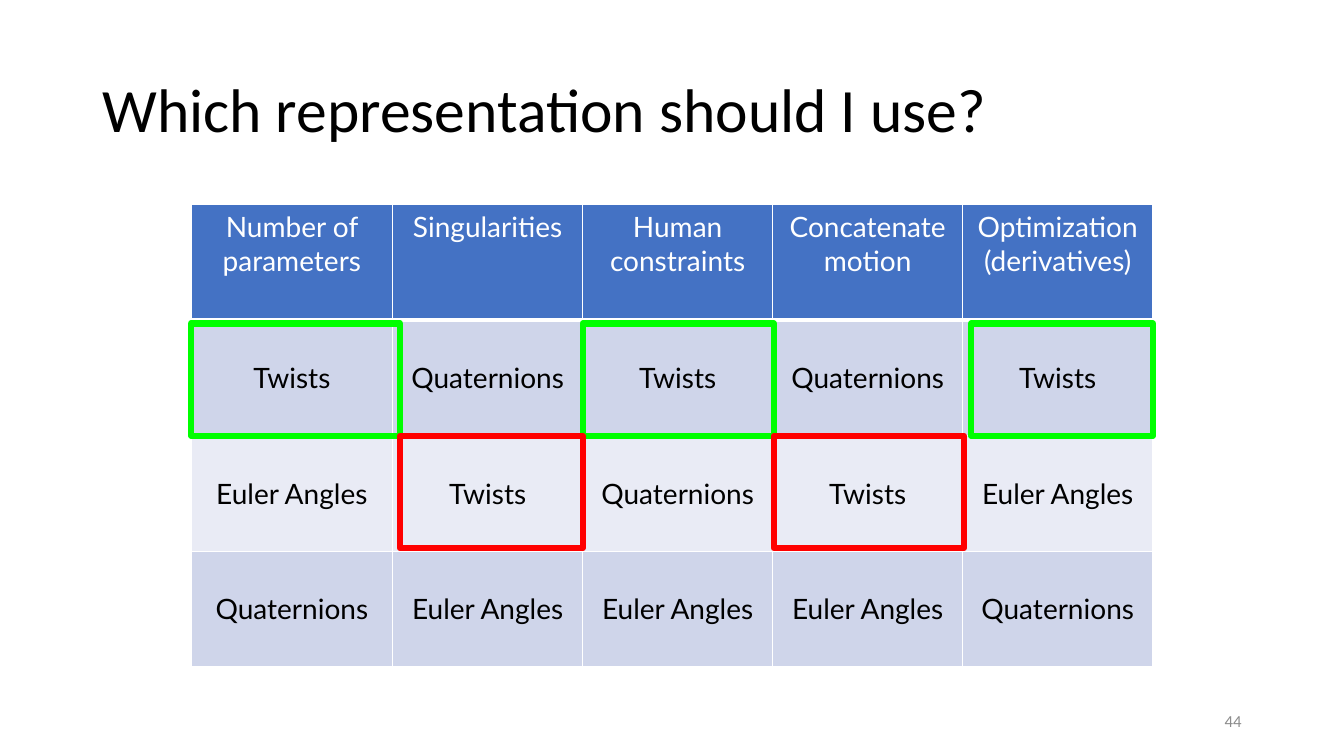
from dataclasses import dataclass

from lxml import etree
from pptx import Presentation
from pptx import util as u
from pptx.dml.color import RGBColor
from pptx.enum import shapes, text
from pptx.oxml import ns

TITLE = "Which representation should I use?"
PAGE_NUMBER = "44"
HEADER = ["Number of parameters", "Singularities", "Human constraints",
          "Concatenate motion", "Optimization\n(derivatives)"]
RANKING = [
    ["Twists", "Quaternions", "Twists", "Quaternions", "Twists"],
    ["Euler Angles", "Twists", "Quaternions", "Twists", "Euler Angles"],
    ["Quaternions", "Euler Angles", "Euler Angles", "Euler Angles", "Quaternions"],
]

# Lengths in px, 96 to the inch
SLIDE_SIZE = (1280, 720)
TITLE_BOX = (88, 38, 1104, 139)
NUMBER_BOX = (904, 667, 288, 38)
TABLE_LEFT, TABLE_TOP = 182, 195
COLUMN_WIDTHS = [192] + [181] * 4
ROW_HEIGHT = 110
FRAME_TOP, FRAME_HEIGHT = 308, 107
FIRST_PLACE_FRAMES = [(182, 199), (555, 182), (925, 173)]  # left, width
SECOND_PLACE_FRAMES = [(381, 174), (737, 181)]


@dataclass(frozen=True)
class Theme:
    black: str = "000000"
    white: str = "FFFFFF"
    gray: str = "8C8C8C"
    header: str = "4472C4"
    bands: tuple = ("CFD5EA", "E9EBF5")
    first_place: str = "00FF00"
    second_place: str = "FF0000"
    title_font: str = "Calibri"
    table_font: str = "Lato"
    title_size: int = 44
    table_size: int = 20
    number_size: int = 12
    frame_width: float = 4.5


THEME = Theme()


def px(length):
    return u.Emu(length * 9525)


def place(box):
    return [px(length) for length in box]


def write(frame, content, *, font, size, color, align, anchor, spacing=None):
    frame.word_wrap = True
    frame.vertical_anchor = anchor
    frame.text = content
    for paragraph in frame.paragraphs:
        paragraph.alignment = align
        if spacing:
            paragraph.line_spacing = spacing
        for run in paragraph.runs:
            run.font.name = font
            run.font.size = u.Pt(size)
            run.font.bold = False
            run.font.color.rgb = RGBColor.from_string(color)


def add_borders(cell, bottom_width):
    properties = cell._tc.get_or_add_tcPr()
    for side, width in (("L", 1), ("R", 1), ("T", 1), ("B", bottom_width)):
        line = etree.SubElement(properties, ns.qn(f"a:ln{side}"), w=str(u.Pt(width)))
        fill = etree.SubElement(line, ns.qn("a:solidFill"))
        etree.SubElement(fill, ns.qn("a:srgbClr"), val=THEME.white)


def add_ranking_table(slide):
    rows = [HEADER] + RANKING
    table = slide.shapes.add_table(
        len(rows), len(HEADER), px(TABLE_LEFT), px(TABLE_TOP),
        px(sum(COLUMN_WIDTHS)), px(ROW_HEIGHT * len(rows))).table
    for column, width in zip(table.columns, COLUMN_WIDTHS):
        column.width = px(width)
    for r, labels in enumerate(rows):
        is_header = r == 0
        table.rows[r].height = px(ROW_HEIGHT)
        fill = THEME.header if is_header else THEME.bands[(r - 1) % 2]
        anchor = text.MSO_ANCHOR.TOP if is_header else text.MSO_ANCHOR.MIDDLE
        for c, label in enumerate(labels):
            cell = table.cell(r, c)
            write(cell.text_frame, label, font=THEME.table_font, size=THEME.table_size,
                  color=THEME.white if is_header else THEME.black,
                  align=text.PP_ALIGN.CENTER, anchor=anchor)
            cell.vertical_anchor = anchor
            add_borders(cell, 3 if is_header else 1)
            cell.fill.solid()
            cell.fill.fore_color.rgb = RGBColor.from_string(fill)


def add_frames(slide, spans, top, color):
    for left, width in spans:
        frame = slide.shapes.add_shape(
            shapes.MSO_SHAPE.RECTANGLE, *place((left, top, width, FRAME_HEIGHT)))
        frame.shadow.inherit = False
        frame.fill.background()
        frame.line.color.rgb = RGBColor.from_string(color)
        frame.line.width = u.Pt(THEME.frame_width)


def main():
    presentation = Presentation()
    presentation.slide_width, presentation.slide_height = place(SLIDE_SIZE)
    slide = presentation.slides.add_slide(presentation.slide_layouts[5])

    title = slide.shapes.title
    title.left, title.top, title.width, title.height = place(TITLE_BOX)
    write(title.text_frame, TITLE, font=THEME.title_font, size=THEME.title_size,
          color=THEME.black, align=text.PP_ALIGN.LEFT,
          anchor=text.MSO_ANCHOR.MIDDLE, spacing=0.9)

    add_ranking_table(slide)
    add_frames(slide, FIRST_PLACE_FRAMES, FRAME_TOP, THEME.first_place)
    add_frames(slide, SECOND_PLACE_FRAMES, FRAME_TOP + FRAME_HEIGHT, THEME.second_place)

    number = slide.shapes.add_textbox(*place(NUMBER_BOX))
    write(number.text_frame, PAGE_NUMBER, font=THEME.title_font, size=THEME.number_size,
          color=THEME.gray, align=text.PP_ALIGN.RIGHT, anchor=text.MSO_ANCHOR.MIDDLE)

    presentation.save("out.pptx")


if __name__ == "__main__":
    main()
